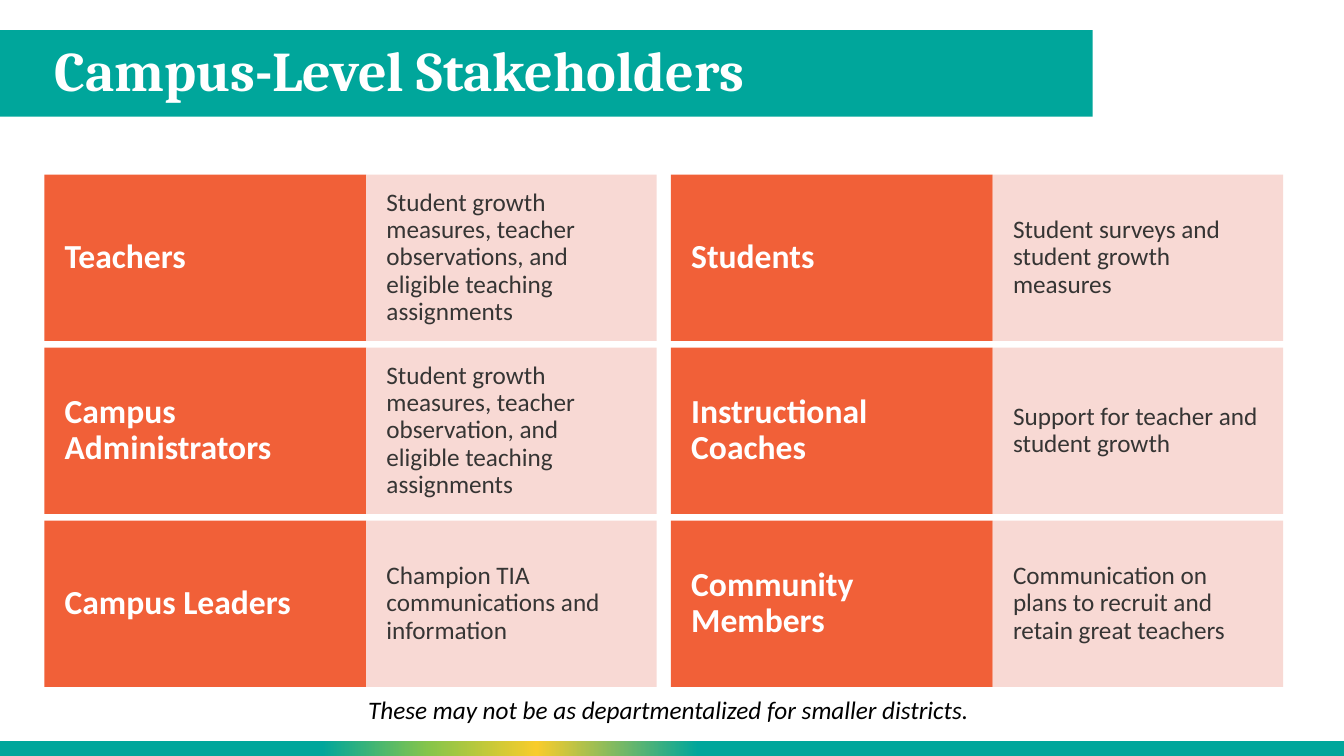
from lxml.etree import SubElement
from pptx import Presentation
from pptx.dml.color import RGBColor
from pptx.enum.shapes import MSO_SHAPE
from pptx.enum.text import MSO_ANCHOR, PP_ALIGN
from pptx.oxml.ns import qn
from pptx.util import Cm, Pt

COLORS = {
    "teal": "00A69B", "yellow": "F8CC2B", "green": "87C54A",
    "orange": "F16038", "pink": "F8D9D4", "white": "FFFFFF",
    "gray": "363534", "black": "000000",
}

STAKEHOLDERS = [
    [
        ("Teachers", "Student growth measures, teacher observations, and eligible teaching assignments"),
        ("Campus Administrators", "Student growth measures, teacher observation, and eligible teaching assignments"),
        ("Campus Leaders", "Champion TIA communications and information"),
    ],
    [
        ("Students", "Student surveys and student growth measures"),
        ("Instructional Coaches", "Support for teacher and student growth"),
        ("Community Members", "Communication on plans to recruit and retain great teachers"),
    ],
]

BAND_STOPS = [(0, "teal"), (24, "teal"), (32, "green"), (40, "yellow"), (52, "teal"), (100, "teal")]

GRID_LEFT, GRID_TOP = 1.12, 4.4
ROLE_WIDTH, DETAIL_WIDTH, CELL_HEIGHT = 8.11, 7.32, 4.19
COLUMN_PITCH, ROW_PITCH = 15.79, 4.36


class SlideBuilder:
    def __init__(self, slide):
        self.slide = slide

    def color(self, name):
        return RGBColor.from_string(COLORS[name])

    def box(self, left, top, width, height, fill):
        shape = self.slide.shapes.add_shape(
            MSO_SHAPE.RECTANGLE, Cm(left), Cm(top), Cm(width), Cm(height))
        shape.shadow.inherit = False
        shape.fill.solid()
        shape.fill.fore_color.rgb = self.color(fill)
        shape.line.fill.background()
        return shape

    def gradient_band(self, left, top, width, height, stops):
        shape = self.box(left, top, width, height, "teal")
        shape.fill.gradient()
        shape.fill.gradient_angle = 0
        stop_list = shape._element.spPr.find(qn("a:gradFill")).find(qn("a:gsLst"))
        for stop in list(stop_list):
            stop_list.remove(stop)
        for percent, name in stops:
            stop = SubElement(stop_list, qn("a:gs"), pos=str(percent * 1000))
            SubElement(stop, qn("a:srgbClr"), val=COLORS[name])

    def text_box(self, left, top, width, height):
        return self.slide.shapes.add_textbox(Cm(left), Cm(top), Cm(width), Cm(height))

    def set_text(self, shape, text, size, color, font="Calibri", bold=False, italic=False,
                 align=PP_ALIGN.LEFT, spacing=0.9, inset=0.25):
        frame = shape.text_frame
        frame.word_wrap = True
        frame.vertical_anchor = MSO_ANCHOR.MIDDLE
        frame.margin_left = frame.margin_right = Cm(inset)
        frame.margin_top = frame.margin_bottom = Cm(0.13)
        paragraph = frame.paragraphs[0]
        paragraph.alignment = align
        paragraph.line_spacing = spacing
        run = paragraph.add_run()
        run.text = text
        run.font.name = font
        run.font.size = Pt(size)
        run.font.bold = bold
        run.font.italic = italic
        run.font.color.rgb = self.color(color)

    def stakeholder(self, left, top, role, detail):
        role_box = self.box(left, top, ROLE_WIDTH, CELL_HEIGHT, "orange")
        self.set_text(role_box, role, 24, "white", bold=True, inset=0.51)
        detail_box = self.box(left + ROLE_WIDTH, top, DETAIL_WIDTH, CELL_HEIGHT, "pink")
        self.set_text(detail_box, detail, 18, "gray", inset=0.51)


def main():
    presentation = Presentation()
    presentation.slide_width = Cm(33.87)
    presentation.slide_height = Cm(19.05)
    builder = SlideBuilder(presentation.slides.add_slide(presentation.slide_layouts[6]))

    builder.box(-0.03, 0.76, 27.57, 2.18, "teal")
    builder.gradient_band(-0.03, 18.67, 33.9, 0.38, BAND_STOPS)
    title = builder.text_box(1.12, 0.76, 25.55, 2.18)
    builder.set_text(title, "Campus-Level Stakeholders", 40, "white", font="Cambria", bold=True)

    for column, group in enumerate(STAKEHOLDERS):
        for row, (role, detail) in enumerate(group):
            builder.stakeholder(
                GRID_LEFT + column * COLUMN_PITCH, GRID_TOP + row * ROW_PITCH, role, detail)

    note = builder.text_box(0.99, 17.32, 31.72, 1.12)
    builder.set_text(note, "These may not be as departmentalized for smaller districts.",
                     18, "black", italic=True, align=PP_ALIGN.CENTER, spacing=1.0)
    presentation.save("out.pptx")


if __name__ == "__main__":
    main()
